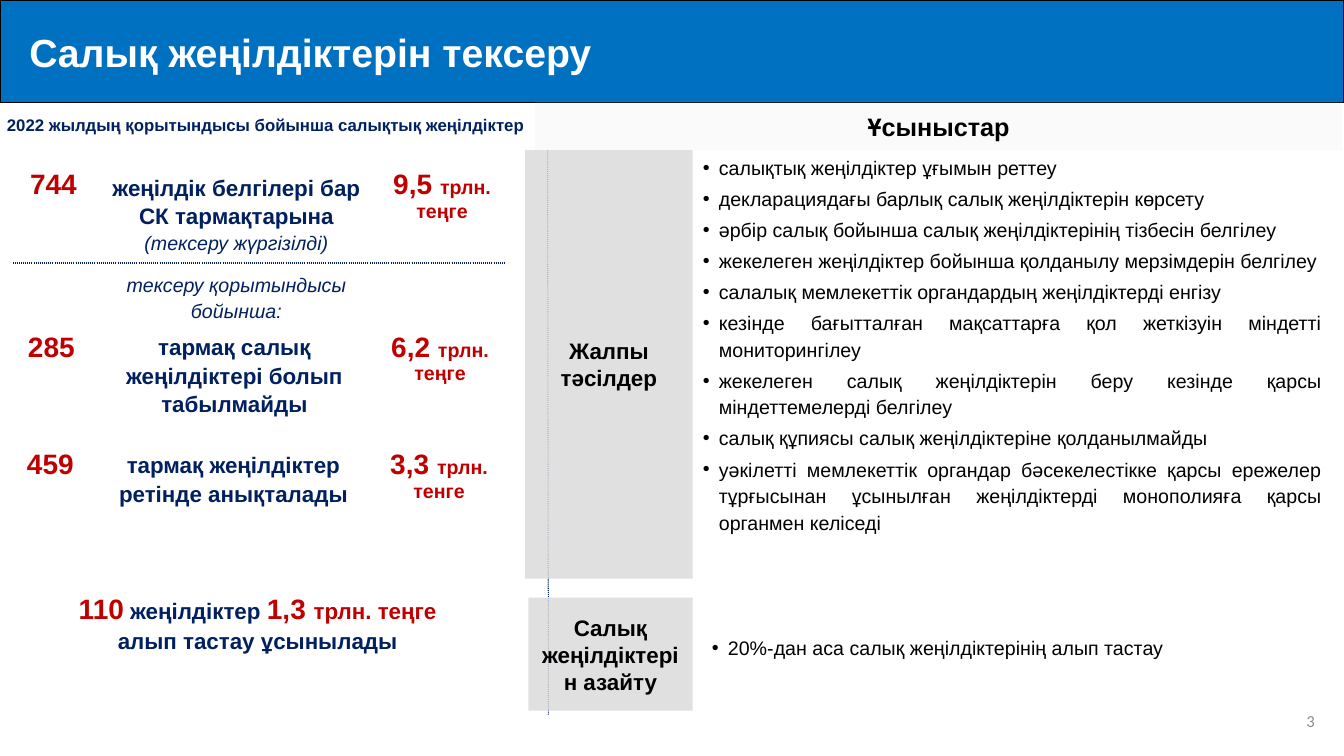
import pptx
import pptx.util
import pptx.dml.color
import pptx.enum.dml
import pptx.enum.shapes
import pptx.enum.text
import pptx.oxml
import pptx.oxml.ns

Inches, Pt = pptx.util.Inches, pptx.util.Pt
RGB = pptx.dml.color.RGBColor.from_string
ALIGN, ANCHOR = pptx.enum.text.PP_ALIGN, pptx.enum.text.MSO_ANCHOR
NS = pptx.oxml.ns.nsdecls("a")
COLORS = {"blue": "0070C0", "navy": "002060", "red": "C00000", "grey": "D9D9D9",
          "pale": "FAFAFA", "white": "FFFFFF", "black": "000000", "number": "8C8C8C"}


def write(tf, paragraphs, align=ALIGN.CENTER, spacing=None, before=0, bullet=False, font="Arial"):
    """Fill a text frame; each paragraph is a list of (text, size, color, style) runs."""
    for i, runs in enumerate(paragraphs):
        p = tf.paragraphs[0] if i == 0 else tf.add_paragraph()
        if bullet:
            pPr = p._p.get_or_add_pPr()
            pPr.set("marL", str(Inches(0.16)))
            pPr.set("indent", str(-Inches(0.16)))
            for tag in (f'<a:buClr {NS}><a:srgbClr val="{COLORS["black"]}"/></a:buClr>',
                        f'<a:buFont {NS} typeface="Arial"/>', f'<a:buChar {NS} char="•"/>'):
                pPr.append(pptx.oxml.parse_xml(tag))
        p.alignment = align
        p.space_before = Pt(before if i else 0)
        if spacing:
            p.line_spacing = spacing
        for text, size, color, style in runs:
            r = p.add_run()
            r.text = text
            values = {"name": font, "size": Pt(size), "bold": style == "b", "italic": style == "i"}
            for key, value in values.items():
                setattr(r.font, key, value)
            r.font.color.rgb = RGB(COLORS[color])


def add_white_table(left, top, widths, rows):
    """Add a table; each row is (height, cells), each cell is (paragraphs, anchor, spacing)."""
    height = sum(h for h, _ in rows)
    table = s.shapes.add_table(len(rows), len(widths), Inches(left), Inches(top),
                               Inches(sum(widths)), Inches(height)).table
    table.first_row = table.horz_banding = False
    for column, width in zip(table.columns, widths):
        column.width = Inches(width)
    for i, (row_height, cells) in enumerate(rows):
        table.rows[i].height = Inches(row_height)
        for j, (paragraphs, anchor, spacing) in enumerate(cells):
            cell = table.cell(i, j)
            cell.fill.solid()
            cell.fill.fore_color.rgb = RGB(COLORS["white"])
            cell.vertical_anchor = anchor
            write(cell.text_frame, paragraphs, spacing=spacing)
    return table


prs = pptx.Presentation()
prs.slide_width, prs.slide_height = Inches(13.33), Inches(7.5)
s = prs.slides.add_slide(prs.slide_layouts[3])

# Title bar
title = s.shapes.title
title.left, title.top, title.width, title.height = 0, 0, prs.slide_width, Inches(1.02)
title.fill.solid()
title.fill.fore_color.rgb = RGB(COLORS["blue"])
title.line.color.rgb = RGB(COLORS["black"])
title.line.width = Pt(1)
tf = title.text_frame
tf.auto_size = pptx.enum.text.MSO_AUTO_SIZE.NONE
tf.vertical_anchor = ANCHOR.MIDDLE
tf.margin_left = Inches(0.29)
write(tf, [[("Салық жеңілдіктерін тексеру", 28, "white", "b")]], ALIGN.LEFT)

# Recommendation lists
general = ["салықтық жеңілдіктер ұғымын реттеу",
           "декларациядағы барлық салық жеңілдіктерін көрсету",
           "әрбір салық бойынша салық жеңілдіктерінің тізбесін белгілеу",
           "жекелеген жеңілдіктер бойынша қолданылу мерзімдерін белгілеу",
           "салалық мемлекеттік органдардың жеңілдіктерді енгізу",
           "кезінде бағытталған мақсаттарға қол жеткізуін міндетті мониторингілеу",
           "жекелеген салық жеңілдіктерін беру кезінде қарсы міндеттемелерді белгілеу",
           "салық құпиясы салық жеңілдіктеріне қолданылмайды",
           "уәкілетті мемлекеттік органдар бәсекелестікке қарсы ережелер тұрғысынан "
           "ұсынылған жеңілдіктерді монополияға қарсы органмен келіседі"]
reduction = ["20%-дан аса салық жеңілдіктерінің алып тастау"]
for idx, box, items in [(1, (6.87, 1.46, 6.34, 3.91), general),
                        (2, (6.96, 6.23, 6.34, 0.35), reduction)]:
    body = s.placeholders[idx]
    body.left, body.top, body.width, body.height = map(Inches, box)
    body.text_frame.auto_size = pptx.enum.text.MSO_AUTO_SIZE.NONE
    write(body.text_frame, [[(item, 14, "black", "")] for item in items],
          ALIGN.JUSTIFY, spacing=1.14, before=3, bullet=True)

# Divider between the two halves
divider = s.shapes.add_connector(pptx.enum.shapes.MSO_CONNECTOR.STRAIGHT,
                                 Inches(5.44), Inches(7.09), Inches(5.43), Inches(1.09))
divider.line.color.rgb = RGB(COLORS["navy"])
divider.line.width = Pt(0.75)
divider.line.dash_style = pptx.enum.dml.MSO_LINE.ROUND_DOT
divider._element.spPr.append(pptx.oxml.parse_xml(f"<a:effectLst {NS}/>"))

# Heading and row labels on the right
for text, size, fill, alpha, box in [
        ("Ұсыныстар", 18, "pale", 100, (5.31, 1.02, 8, 0.47)),
        ("Жалпы тәсілдер", 16, "grey", 80, (5.21, 1.49, 1.66, 4.25)),
        ("Салық жеңілдіктерін азайту", 16, "grey", 80, (5.24, 5.93, 1.63, 1.12))]:
    sp = s.shapes.add_shape(pptx.enum.shapes.MSO_SHAPE.RECTANGLE, *map(Inches, box))
    sp.shadow.inherit = False
    sp.line.fill.background()
    sp.fill.solid()
    sp.fill.fore_color.rgb = RGB(COLORS[fill])
    if alpha < 100:
        color = sp._element.spPr.find(".//" + pptx.oxml.ns.qn("a:srgbClr"))
        color.append(pptx.oxml.parse_xml(f'<a:alpha {NS} val="{alpha * 1000}"/>'))
    sp.text_frame.vertical_anchor = ANCHOR.MIDDLE
    write(sp.text_frame, [[(text, size, "black", "b")]])

# Left heading and slide number
for text, size, color, style, font, align, wrap, box in [
        ("2022 жылдың қорытындысы бойынша салықтық жеңілдіктер", 12, "navy", "b", "Arial",
         ALIGN.LEFT, False, (-0.03, 1.09, 5.39, 0.3)),
        ("3", 12, "number", "", "Calibri", ALIGN.RIGHT, True, (10.14, 6.95, 3, 0.4))]:
    tf = s.shapes.add_textbox(*map(Inches, box)).text_frame
    tf.word_wrap = wrap
    tf.vertical_anchor = ANCHOR.MIDDLE
    write(tf, [[(text, size, color, style)]], align, font=font)

# Figures on the left: count, description, amount
figures = [
    (0.13, 1.63, 0.98, "744", "9,5", "трлн. теңге", ANCHOR.MIDDLE,
     [("жеңілдік белгілері бар СК тармақтарына ", 16, "navy", "b"),
      ("(тексеру жүргізілді)", 14, "navy", "i")]),
    (0.11, 3.24, 0.99, "285", "6,2", "трлн. теңге", ANCHOR.TOP,
     [("тармақ салық жеңілдіктері болып табылмайды", 16, "navy", "b")]),
    (0.1, 4.41, 0.69, "459", "3,3", "трлн. тенге", ANCHOR.TOP,
     [("тармақ жеңілдіктер ретінде анықталады", 16, "navy", "b")])]
empty = ([], ANCHOR.TOP, None)
findings = ([[("тексеру қорытындысы бойынша:", 14, "navy", "i")]], ANCHOR.BOTTOM, 1.15)
for left, top, height, count, amount, unit, anchor, description in figures:
    rows = [(height, [([[(count, 20, "red", "b")]], ANCHOR.TOP, None),
                      ([description], anchor, 1.15),
                      ([[(amount + " ", 20, "red", "b"), (unit, 14, "red", "b")]],
                       ANCHOR.TOP, None)])]
    if count == "744":
        rows.append((0.59, [empty, findings, empty]))
    table = add_white_table(left, top, [0.8, 2.83, 1.25], rows)
    if len(rows) > 1:
        for i, side in enumerate(["lnB", "lnT"]):
            for cell in table.rows[i].cells:
                cell._tc.get_or_add_tcPr().insert(0, pptx.oxml.parse_xml(
                    f'<a:{side} {NS} w="{Pt(1.5)}"><a:solidFill><a:srgbClr val="{COLORS["navy"]}"/>'
                    f'</a:solidFill><a:prstDash val="sysDot"/></a:{side}>'))

# Proposal to abolish
proposal = [[("110", 20, "red", "b"), (" жеңілдіктер ", 16, "navy", "b"),
             ("1,3 ", 20, "red", "b"), ("трлн. теңге", 16, "red", "b")],
            [("алып тастау ұсынылады", 16, "navy", "b")]]
add_white_table(0.12, 5.47, [4.87], [(1.07, [(proposal, ANCHOR.BOTTOM, 1.15)])])

prs.save("out.pptx")
